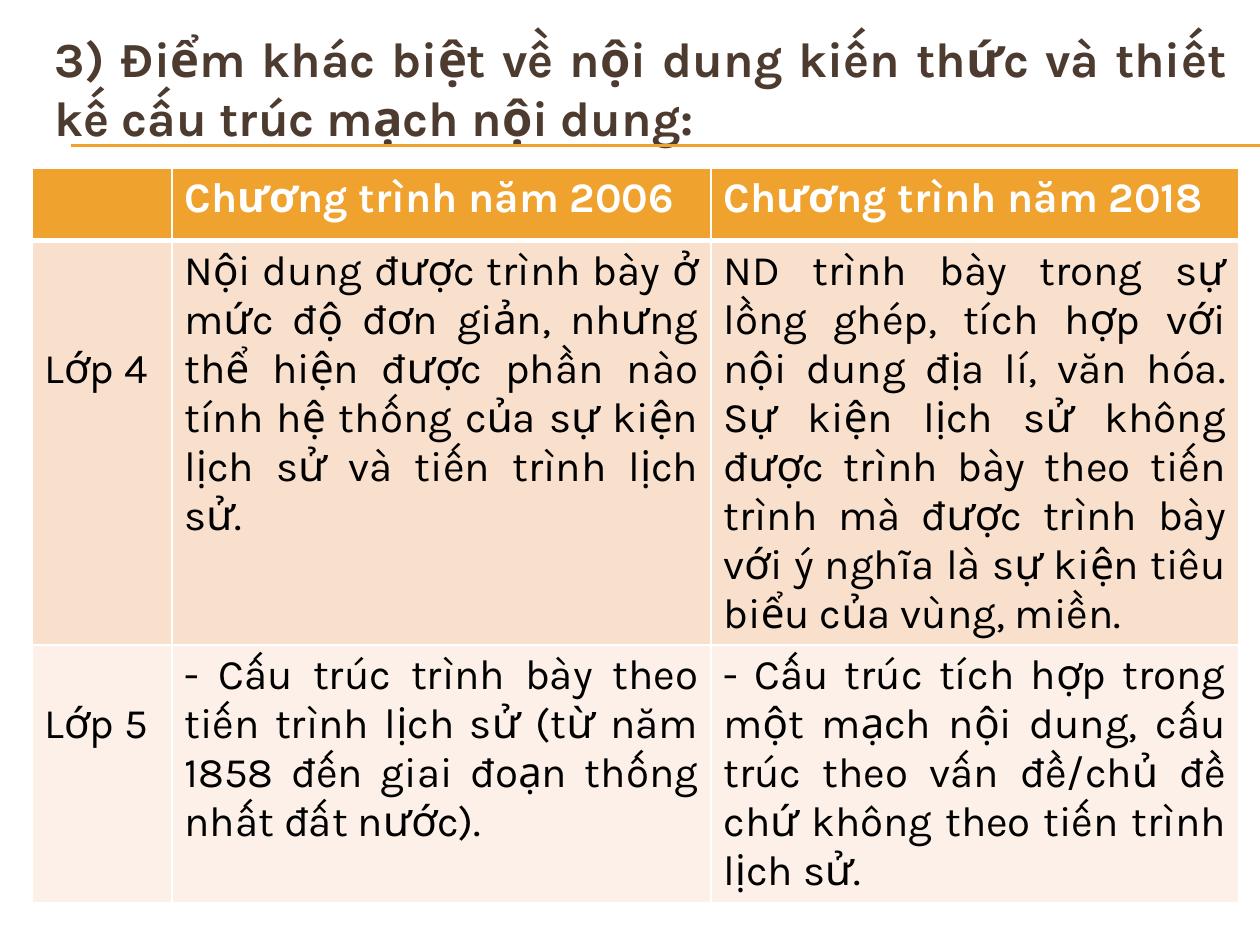
from pptx import Presentation
from pptx.util import Pt
from pptx.dml.color import RGBColor
from pptx.enum.shapes import MSO_CONNECTOR
from pptx.enum.text import MSO_ANCHOR, MSO_AUTO_SIZE, PP_ALIGN as AL
from pptx.oxml.ns import qn
from lxml.etree import SubElement

FONT = "Karla"
ORANGE, WHITE = "F0A22E", "FFFFFF"


def rgb(color):
    return RGBColor.from_string(color)


def set_borders(cell, bottom):
    tcPr = cell._tc.get_or_add_tcPr()
    for i, (side, width) in enumerate([("L", 1), ("R", 1), ("T", 1), ("B", bottom)]):
        ln = SubElement(tcPr, qn(f"a:ln{side}"), w=str(Pt(width)))
        fill = SubElement(ln, qn("a:solidFill"))
        SubElement(fill, qn("a:srgbClr"), val=WHITE)
        tcPr.insert(i, ln)


prs = Presentation()
prs.slide_width, prs.slide_height = Pt(720), Pt(540)
s = prs.slides.add_slide(prs.slide_layouts[5])

for y in (82.8, 83.5):
    line = s.shapes.add_connector(MSO_CONNECTOR.STRAIGHT, Pt(40.5), Pt(y), Pt(720), Pt(y))
    line.line.color.rgb = rgb(ORANGE)
    line.line.width = Pt(0.75)
    SubElement(line._element.spPr, qn("a:effectLst"))

title = s.shapes.title
title.left, title.top, title.width, title.height = Pt(24), Pt(12.5), Pt(684), Pt(80)
tf = title.text_frame
tf.text = "3) Điểm khác biệt về nội dung kiến thức và thiết kế cấu trúc mạch nội dung:"
tf.word_wrap = True
tf.auto_size = MSO_AUTO_SIZE.NONE
tf.vertical_anchor = MSO_ANCHOR.TOP
p = tf.paragraphs[0]
p.alignment = AL.JUSTIFY
p.font.name, p.font.size, p.font.bold = FONT, Pt(28), True
p.font.color.rgb = rgb("4E3B30")

rows = [
    ["", "Chương trình năm 2006", "Chương trình năm 2018"],
    ["Lớp 4",
     "Nội dung được trình bày ở mức độ đơn giản, nhưng thể hiện được phần nào "
     "tính hệ thống của sự kiện lịch sử và tiến trình lịch sử.",
     "ND trình bày trong sự lồng ghép, tích hợp với nội dung địa lí, văn hóa. "
     "Sự kiện lịch sử không được trình bày theo tiến trình mà được trình bày "
     "với ý nghĩa là sự kiện tiêu biểu của vùng, miền."],
    ["Lớp 5",
     "- Cấu trúc trình bày theo tiến trình lịch sử (từ năm 1858 đến giai đoạn "
     "thống nhất đất nước).",
     "- Cấu trúc tích hợp trong một mạch nội dung, cấu trúc theo vấn đề/chủ đề "
     "chứ không theo tiến trình lịch sử."],
]
col_widths = [80, 308, 301.5]
row_heights = [41.5, 231, 147]
row_fills = [ORANGE, "F9E0CD", "FCF0E8"]
label_tops = [3.6, 59.6, 31.6]

table = s.shapes.add_table(3, 3, Pt(18.2), Pt(96), Pt(sum(col_widths)), Pt(sum(row_heights))).table
for col, width in zip(table.columns, col_widths):
    col.width = Pt(width)
for i, texts in enumerate(rows):
    table.rows[i].height = Pt(row_heights[i])
    header = i == 0
    for j, text in enumerate(texts):
        cell = table.cell(i, j)
        cell.fill.solid()
        cell.fill.fore_color.rgb = rgb(row_fills[i])
        set_borders(cell, 3 if header else 1)
        cell.text = text
        p = cell.text_frame.paragraphs[0]
        p.font.name, p.font.size, p.font.bold = FONT, Pt(24), header
        p.font.color.rgb = rgb(WHITE if header else "000000")
        if j == 0:
            cell.margin_top = Pt(label_tops[i])
        elif not header:
            p.alignment = AL.JUSTIFY

prs.save("out.pptx")
